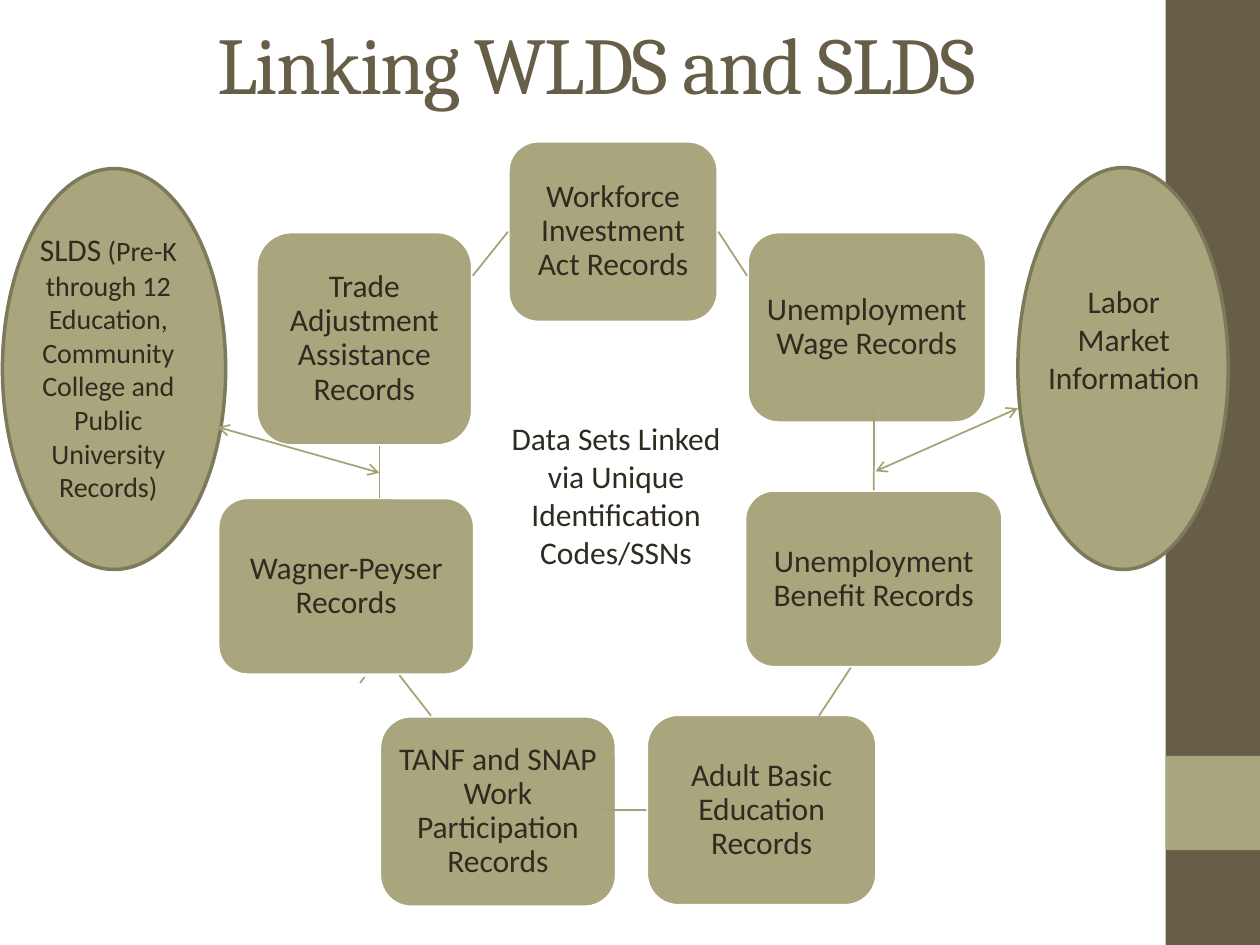
from lxml import etree
from pptx import Presentation
from pptx.dml.color import RGBColor
from pptx.enum.shapes import MSO_CONNECTOR, MSO_SHAPE as SHAPE
from pptx.enum.text import MSO_ANCHOR as ANCHOR, PP_ALIGN
from pptx.oxml.ns import qn
from pptx.util import Cm, Pt

BROWN, OLIVE, EDGE, LINK = "675E47", "A9A57C", "7D7A5C", "A6A278"
INK, WHITE = "2F2B20", "FFFFFF"

# Content: all places are left, top, width, height in cm
TITLE = "Linking WLDS and SLDS"
BARS = [((23.5, 0, 1.9, 19.05), BROWN), ((23.5, 15.24, 1.9, 1.9), OLIVE)]
RECORDS = {
    "wia": ("Workforce Investment Act Records", (10.24, 2.84, 4.24, 3.66)),
    "wage": ("Unemployment Wage Records", (15.06, 4.67, 4.83, 3.86)),
    "benefit": ("Unemployment Benefit Records", (15.01, 9.88, 5.21, 3.58)),
    "adult": ("Adult Basic Education Records", (13.03, 14.4, 4.65, 3.86)),
    "tanf": ("TANF and SNAP Work Participation Records", (7.65, 14.43, 4.78, 3.86)),
    "wagner": ("Wagner-Peyser Records", (4.39, 10.03, 5.18, 3.58)),
    "trade": ("Trade Adjustment Assistance Records", (5.16, 4.67, 4.37, 4.32)),
}
ARC = [(7.26, 13.77), (7.39, 13.59), (7.52, 13.44), (7.65, 13.28)]
ELLIPSES = [(0.05, 3.4, 4.5, 8.08), (20.52, 3.38, 4.24, 8.1)]
LABELS = [
    ((9.88, 8.33, 5.08, 3.33),
     [("Data Sets Linked via Unique Identification Codes/SSNs", 18)]),
    ((0.28, 4.52, 3.81, 5.82),
     [("SLDS", 18),
      (" (Pre-K through 12 Education, Community College and Public "
       "University Records)", 16)]),
    ((20.85, 5.56, 3.61, 2.57), [("Labor Market Information", 18)]),
]
ARROWS = [(4.39, 8.61, 7.65, 9.53), (20.52, 8.23, 17.65, 9.5)]
# Ends, then the (record, side) joined at the beginning and at the end
LINKS = [
    ((9.53, 5.56, 10.24, 4.67), None, ("wia", 1)),
    ((14.48, 4.67, 15.06, 5.56), ("wia", 3), None),
    ((17.62, 8.13, 17.62, 9.88), None, ("benefit", 0)),
    ((7.65, 8.99, 7.65, 10.03), None, None),
    ((8.05, 13.61, 8.69, 14.43), None, None),
    ((17.15, 13.46, 16.51, 14.43), None, None),
    ((13.03, 16.33, 12.01, 16.33), ("adult", 1), None),
]


def rgb(color):
    return RGBColor.from_string(color)


def cm(values):
    return [Cm(v) for v in values]


def write(sp, runs, font="Calibri", color=INK, anchor=ANCHOR.TOP, spacing=None):
    tf = sp.text_frame
    tf.word_wrap = True
    tf.vertical_anchor = anchor
    p = tf.paragraphs[0]
    p.alignment = PP_ALIGN.CENTER
    p.line_spacing = spacing
    for text, size in runs:
        r = p.add_run()
        r.text = text
        r.font.name, r.font.size = font, Pt(size)
        r.font.color.rgb = rgb(color)
    return p


def add_block(kind, place, fill, line=None):
    sp = s.shapes.add_shape(kind, *cm(place))
    sp.shadow.inherit = False
    sp.fill.solid()
    sp.fill.fore_color.rgb = rgb(fill)
    if line:
        sp.line.color.rgb, sp.line.width = rgb(line), Pt(2)
    else:
        sp.line.fill.background()
    return sp


def add_link(ends, arrows=False):
    c = s.shapes.add_connector(MSO_CONNECTOR.STRAIGHT, *cm(ends))
    c.line.color.rgb, c.line.width = rgb(LINK), Pt(1)
    if arrows:
        ln = c.line._get_or_add_ln()
        for tag in ("a:headEnd", "a:tailEnd"):
            etree.SubElement(ln, qn(tag)).set("type", "arrow")
    etree.SubElement(c._element.spPr, qn("a:effectLst"))
    return c


prs = Presentation()
prs.slide_width, prs.slide_height = Cm(25.4), Cm(19.05)
s = prs.slides.add_slide(prs.slide_layouts[6])

# Side bars and title
for place, fill in BARS:
    add_block(SHAPE.RECTANGLE, place, fill)
title = s.shapes.add_textbox(*cm((1.45, -0.33, 21.16, 3.18)))
p = write(title, [(TITLE, 46)], "Cambria", BROWN, ANCHOR.MIDDLE)
p.runs[0].font._element.set("spc", "-100")

# Short arc, partly covered by the records
arc = s.shapes.build_freeform(*cm(ARC[0]), scale=1.0)
arc.add_line_segments([cm(point) for point in ARC[1:]], close=False)
sp = arc.convert_to_shape()
sp.shadow.inherit = False
sp.fill.background()
sp.line.color.rgb, sp.line.width = rgb(LINK), Pt(1)

# Ring of records
boxes = {}
for key, (text, place) in RECORDS.items():
    sp = boxes[key] = add_block(SHAPE.ROUNDED_RECTANGLE, place, OLIVE, WHITE)
    write(sp, [(text, 18)], anchor=ANCHOR.MIDDLE, spacing=0.9)
    tf = sp.text_frame
    tf.margin_left = tf.margin_right = tf.margin_top = tf.margin_bottom = Cm(0.19)

# Outer data sets and labels
for place in ELLIPSES:
    add_block(SHAPE.OVAL, place, OLIVE, EDGE)
for place, runs in LABELS:
    write(s.shapes.add_textbox(*cm(place)), runs)

# Arrows and links
for ends in ARROWS:
    add_link(ends, arrows=True)
for ends, begin, end in LINKS:
    c = add_link(ends)
    if begin:
        c.begin_connect(boxes[begin[0]], begin[1])
    if end:
        c.end_connect(boxes[end[0]], end[1])

prs.save("out.pptx")
